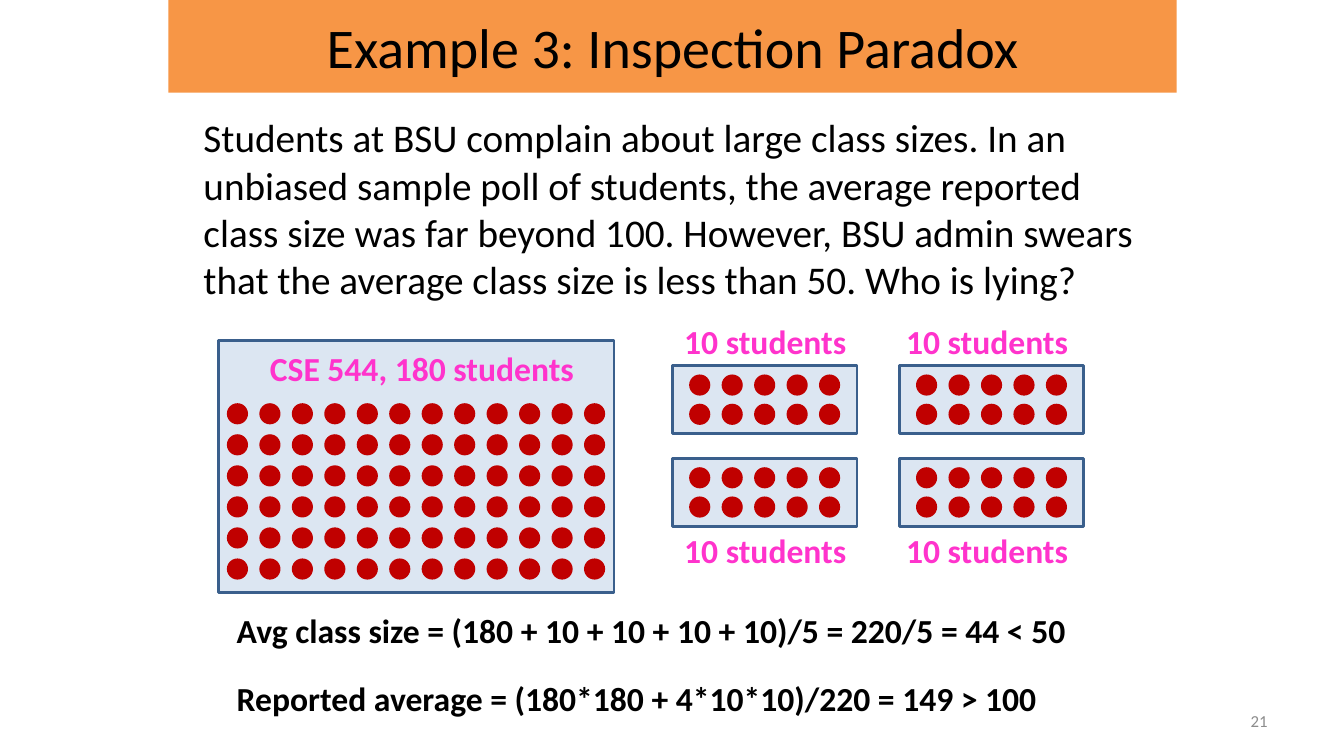
from pptx import Presentation
from pptx.dml.color import RGBColor
from pptx.enum.shapes import MSO_SHAPE
from pptx.enum.text import MSO_ANCHOR, PP_ALIGN
from pptx.util import Inches, Pt

ORANGE = RGBColor(0xF7, 0x96, 0x46)
PALE_BLUE = RGBColor(0xDC, 0xE6, 0xF2)
OUTLINE_BLUE = RGBColor(0x3A, 0x5F, 0x8C)
RED = RGBColor(0xC0, 0x00, 0x00)
PINK = RGBColor(0xFF, 0x33, 0xCC)
BLACK = RGBColor(0x00, 0x00, 0x00)
GRAY = RGBColor(0x8C, 0x8C, 0x8C)

DOT_SIZE = 0.21
DOT_PITCH = 0.322
LABEL_HEIGHT = 0.5


def write_text(shape, text, size, color=BLACK, bold=False,
               align=PP_ALIGN.LEFT, anchor=MSO_ANCHOR.TOP):
    frame = shape.text_frame
    frame.word_wrap = True
    frame.vertical_anchor = anchor
    paragraph = frame.paragraphs[0]
    paragraph.text = text
    paragraph.alignment = align
    paragraph.font.name = "Calibri"
    paragraph.font.size = Pt(size)
    paragraph.font.bold = bold
    paragraph.font.color.rgb = color
    return paragraph


def add_text(slide, box, text, size, **style):
    shape = slide.shapes.add_textbox(*map(Inches, box))
    return write_text(shape, text, size, **style)


def add_label(slide, box, text):
    add_text(slide, box, text, 24, color=PINK, bold=True, align=PP_ALIGN.CENTER)


def add_filled(shapes, kind, box, fill, line=None):
    shape = shapes.add_shape(kind, *map(Inches, box))
    shape.shadow.inherit = False
    shape.fill.solid()
    shape.fill.fore_color.rgb = fill
    if line is None:
        shape.line.fill.background()
    else:
        shape.line.color.rgb = line
        shape.line.width = Pt(2)
    return shape


def add_room(shapes, box):
    add_filled(shapes, MSO_SHAPE.RECTANGLE, box, PALE_BLUE, OUTLINE_BLUE)


def add_dot_row(shapes, left, top, count):
    for column in range(count):
        box = (left + column * DOT_PITCH, top, DOT_SIZE, DOT_SIZE)
        add_filled(shapes, MSO_SHAPE.OVAL, box, RED)


def add_title_bar(slide, box):
    bar = add_filled(slide.shapes, MSO_SHAPE.RECTANGLE, box, ORANGE)
    write_text(bar, "Example 3: Inspection Paradox", 40,
               align=PP_ALIGN.CENTER, anchor=MSO_ANCHOR.MIDDLE)


def add_problem(slide, box):
    paragraph = add_text(
        slide, box,
        "Students at BSU complain about large class sizes. In an unbiased "
        "sample poll of students, the average reported class size was far "
        "beyond 100. However, BSU admin swears that the average class size "
        "is less than 50. Who is lying?", 28)
    paragraph.space_before = Pt(12)
    paragraph.space_after = Pt(6)


def add_large_class(slide, box):
    left, top, width, height = box
    add_room(slide.shapes, box)
    for row in range(6):
        group = slide.shapes.add_group_shape()
        add_dot_row(group.shapes, left + 0.08, top + 0.62 + row * 0.308, 12)
    add_label(slide, (left + 0.35, top + 0.02, 3.33, LABEL_HEIGHT),
              "CSE 544, 180 students")


def add_small_class(slide, box):
    left, top, width, height = box
    group = slide.shapes.add_group_shape()
    add_room(group.shapes, box)
    for row in range(2):
        add_dot_row(group.shapes, left + 0.165, top + 0.085 + row * 0.29, 5)


def add_small_classes(slide, box):
    left, top, width, height = box
    room_width, room_height = 1.83, 0.67
    # Rooms sit in the corners of the box
    for room_left in (left, left + width - room_width):
        for room_top in (top, top + height - room_height):
            add_small_class(slide, (room_left, room_top, room_width, room_height))
    # Labels go above the upper rooms and below the lower ones
    for label_top in (top - LABEL_HEIGHT, top + height - 0.01):
        for label_left in (left - 0.04, left + 2.16):
            add_label(slide, (label_left, label_top, 1.92, LABEL_HEIGHT),
                      "10 students")


def add_averages(slide, box):
    left, top, width, height = box
    lines = ("Avg class size = (180 + 10 + 10 + 10 + 10)/5 = 220/5 = 44 < 50",
             "Reported average = (180*180 + 4*10*10)/220 = 149 > 100")
    line_height = 0.5
    pitch = height - line_height
    for index, line in enumerate(lines):
        add_text(slide, (left, top + index * pitch, width, line_height),
                 line, 24, bold=True)


def add_page_number(slide, box):
    add_text(slide, box, "21", 12, color=GRAY,
             align=PP_ALIGN.RIGHT, anchor=MSO_ANCHOR.MIDDLE)


def main():
    presentation = Presentation()
    presentation.slide_width = Inches(13.33)
    presentation.slide_height = Inches(7.5)
    slide = presentation.slides.add_slide(presentation.slide_layouts[6])

    # Heading and question
    add_title_bar(slide, (1.67, 0, 10, 0.92))
    add_page_number(slide, (9.56, 6.95, 3.11, 0.4))
    add_problem(slide, (1.92, 1.08, 9.5, 2.47))

    # Classes drawn as rooms of students
    add_large_class(slide, (2.17, 3.38, 3.92, 2.5))
    add_small_classes(slide, (6.67, 3.63, 4.08, 1.59))

    # The two ways of averaging
    add_averages(slide, (2.25, 6, 8.67, 1.18))

    presentation.save("out.pptx")


if __name__ == "__main__":
    main()
